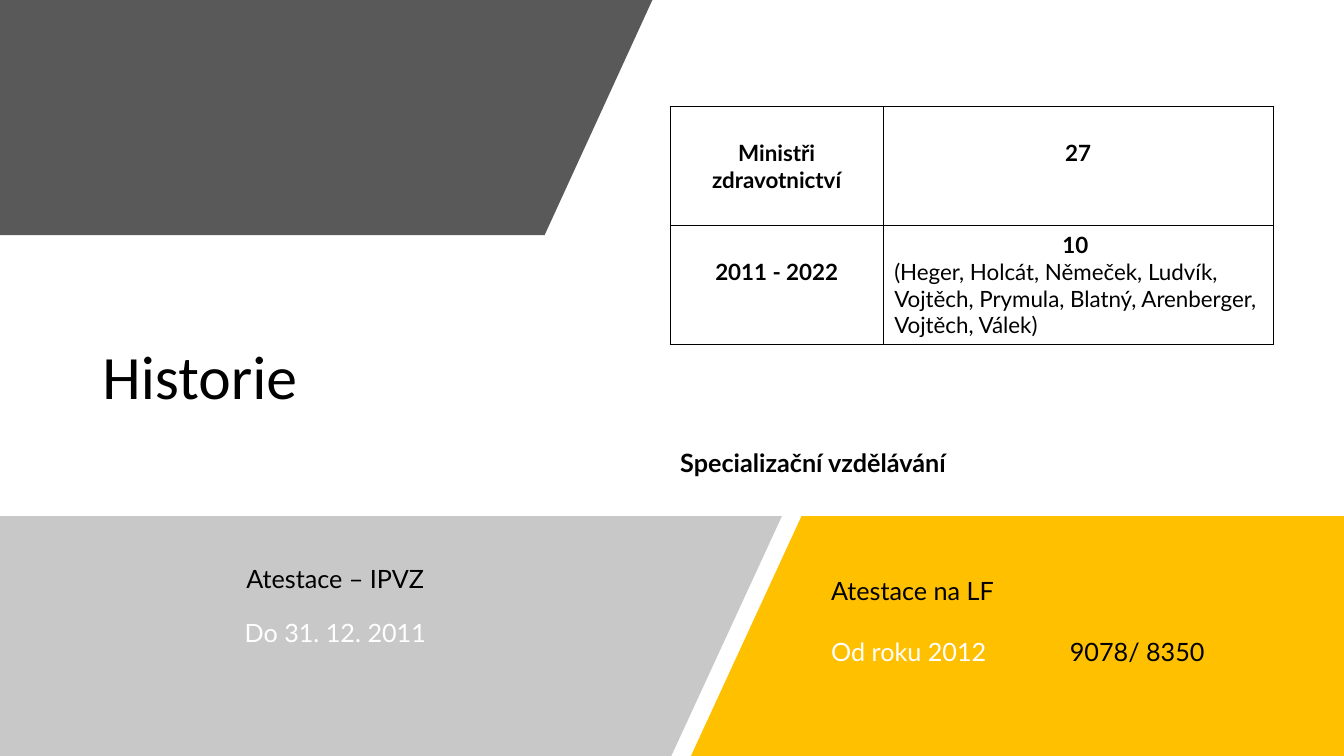
import pptx
import pptx.dml.color
import pptx.enum.text
import pptx.oxml
import pptx.util

Pt = pptx.util.Pt
RGB = pptx.dml.color.RGBColor
ALIGN = pptx.enum.text.PP_ALIGN
ANCHOR = pptx.enum.text.MSO_ANCHOR
NS = 'xmlns:a="http://schemas.openxmlformats.org/drawingml/2006/main"'

BLACK = RGB(0x00, 0x00, 0x00)
WHITE = RGB(0xFF, 0xFF, 0xFF)
DARK = RGB(0x59, 0x59, 0x59)
GREY = RGB(0xB2, 0xB2, 0xB2)
AMBER = RGB(0xFF, 0xC0, 0x00)


class SlideBuilder:
    """Holds the text style and the slide being built."""
    font = "Lato"
    size = 18

    def __init__(self, slide):
        self.s = slide

    def style(self, p, color=BLACK, bold=False, size=None, align=ALIGN.LEFT):
        p.alignment = align
        for r in p.runs:
            r.font.name = self.font
            r.font.size = Pt(size or self.size)
            r.font.bold = bold
            r.font.color.rgb = color

    def title(self, text, left, top, width, height):
        sp = self.s.shapes.title
        sp.left, sp.top, sp.width, sp.height = map(Pt, (left, top, width, height))
        tf = sp.text_frame
        tf.text = text
        tf.word_wrap = True
        tf.auto_size = pptx.enum.text.MSO_AUTO_SIZE.NONE
        tf.vertical_anchor = ANCHOR.MIDDLE
        p = tf.paragraphs[0]
        p.line_spacing = 0.9
        self.style(p, size=44)
        p.runs[0].font.name = "Calibri"

    def band(self, points, color, opacity=None):
        pts = [(Pt(x), Pt(y)) for x, y in points]
        fb = self.s.shapes.build_freeform(*pts[0])
        fb.add_line_segments(pts[1:], close=True)
        sp = fb.convert_to_shape()
        sp.shadow.inherit = False
        sp.line.fill.background()
        sp.fill.solid()
        sp.fill.fore_color.rgb = color
        if opacity:
            clr = sp.fill._xPr.find(".//" + pptx.oxml.ns.qn("a:srgbClr"))
            clr.append(pptx.oxml.parse_xml(f'<a:alpha {NS} val="{opacity * 1000}"/>'))

    def text(self, lines, left, top, width, height, gap=0, spacing=1.0,
             bold=False, align=ALIGN.LEFT):
        """Each line is a (text, colour) pair; gap separates the lines."""
        tf = self.s.shapes.add_textbox(*map(Pt, (left, top, width, height))).text_frame
        tf.word_wrap = True
        for i, (text, color) in enumerate(lines):
            p = tf.add_paragraph() if i else tf.paragraphs[0]
            p.text = text
            p.line_spacing = spacing
            p.space_before = Pt(gap if i else 0)
            self.style(p, color, bold, align=align)
        return tf

    def tabbed(self, p, text, color, stop):
        """Adds text after a tab stop, in its own colour."""
        pPr = p._p.get_or_add_pPr()
        pPr.append(pptx.oxml.parse_xml(
            f'<a:tabLst {NS}><a:tab pos="{Pt(stop)}" algn="l"/></a:tabLst>'))
        r = p.add_run()
        r.text = "\t" + text
        r.font.name, r.font.size = self.font, Pt(self.size)
        r.font.color.rgb = color

    def table(self, rows, left, top, widths, row_height):
        """Each cell is (top margin, [(text, bold, alignment), ...])."""
        frame = self.s.shapes.add_table(
            len(rows), len(widths), Pt(left), Pt(top),
            Pt(sum(widths)), Pt(row_height * len(rows)))
        tbl = frame.table
        tbl.first_row = tbl.horz_banding = False
        for col, width in zip(tbl.columns, widths):
            col.width = Pt(width)
        for row, cells in zip(tbl.rows, rows):
            row.height = Pt(row_height)
            for cell, (margin, lines) in zip(row.cells, cells):
                self.cell(cell, margin, lines)

    def cell(self, cell, margin, lines):
        cell.margin_left = cell.margin_right = Pt(8)
        cell.margin_top, cell.margin_bottom = Pt(margin), Pt(4)
        tcPr = cell._tc.get_or_add_tcPr()
        for side in "LRTB":
            tcPr.append(pptx.oxml.parse_xml(
                f'<a:ln{side} {NS} w="{Pt(0.5)}"><a:solidFill>'
                f'<a:srgbClr val="{BLACK}"/></a:solidFill></a:ln{side}>'))
        cell.fill.background()
        tf = cell.text_frame
        for i, (text, bold, align) in enumerate(lines):
            p = tf.add_paragraph() if i else tf.paragraphs[0]
            p.text = text
            self.style(p, bold=bold, size=16, align=align)


def main():
    prs = pptx.Presentation()
    prs.slide_width, prs.slide_height = Pt(960), Pt(540)
    b = SlideBuilder(prs.slides.add_slide(prs.slide_layouts[5]))

    # Title and slanted bands
    b.title("Historie", 66, 184.5, 334, 173.5)
    low = 368.7
    b.band([(0, 0), (466, 0), (389, 168), (0, 168)], DARK)
    b.band([(572.5, low), (960, low), (960, 540), (493.5, 540)], AMBER)
    b.band([(0, low), (558.5, low), (479.5, 540), (0, 540)], GREY, opacity=70)

    # Table of ministers
    names = ("(Heger, Holcát, Němeček, Ludvík, Vojtěch, Prymula, Blatný, "
             "Arenberger, Vojtěch, Válek)")
    lowered, upper = 23.5, 4.3
    b.table([
        [(lowered, [("Ministři zdravotnictví", True, ALIGN.CENTER)]),
         (lowered, [("27", True, ALIGN.CENTER)])],
        [(lowered, [("2011 - 2022", True, ALIGN.CENTER)]),
         (upper, [("10 ", True, ALIGN.CENTER), (names, False, ALIGN.LEFT)])],
    ], 478.8, 76.2, [152, 278.6], 85)

    # Specialist training
    b.text([("Atestace – IPVZ", BLACK), ("Do 31. 12. 2011", WHITE)],
           0, 401, 479, 85.5, gap=19.4, spacing=0.9, align=ALIGN.CENTER)
    tf = b.text([("Atestace na LF", BLACK), ("Od roku 2012", WHITE)],
                586.6, 407.5, 340, 72.7, gap=21.6)
    b.tabbed(tf.paragraphs[1], "9078/ 8350", BLACK, stop=170.5)
    b.text([("Specializační vzdělávání", BLACK)], 478.8, 316, 430.5, 29, bold=True)

    prs.save("out.pptx")


if __name__ == "__main__":
    main()
